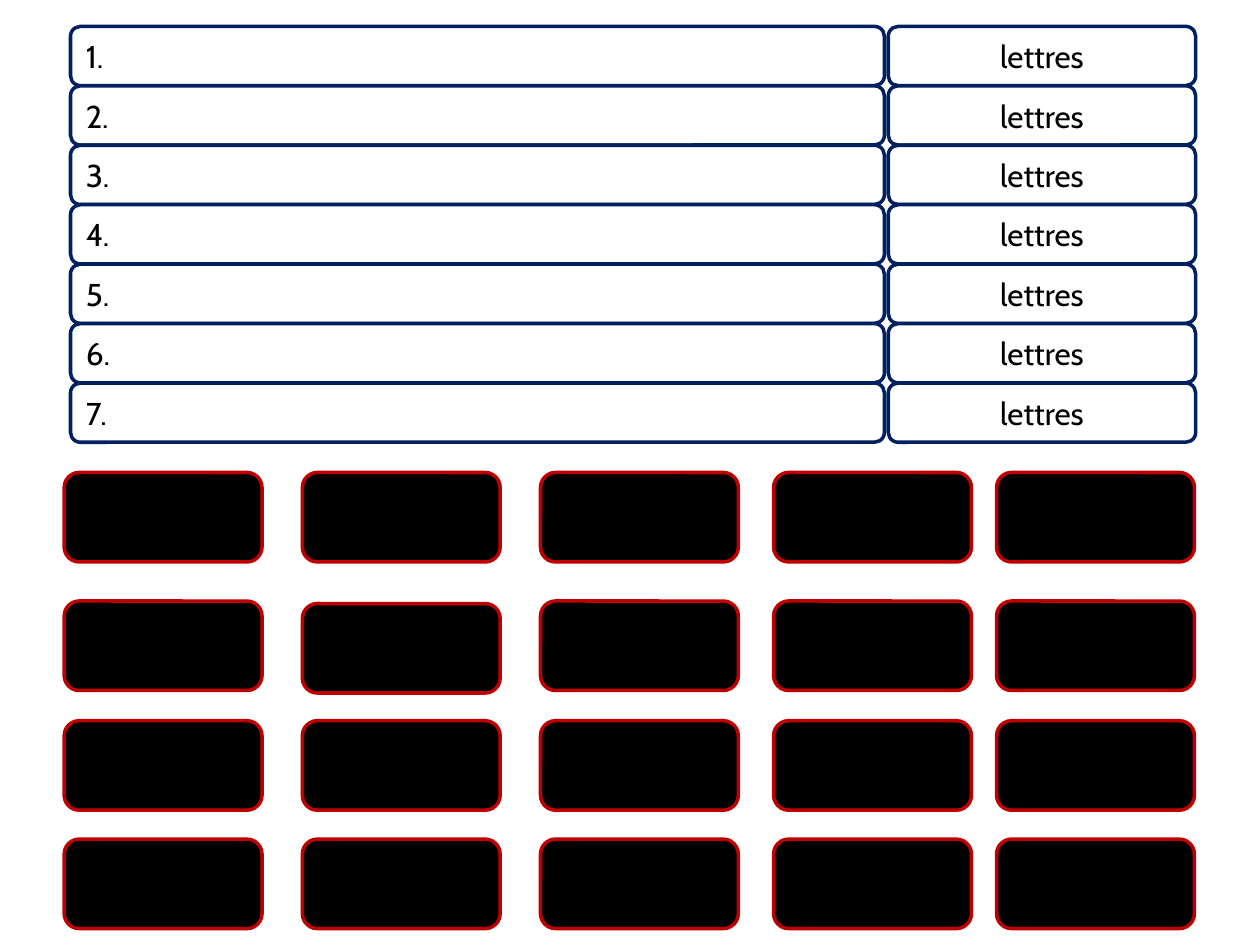
from pptx import Presentation
from pptx.dml.color import RGBColor
from pptx.enum.shapes import MSO_SHAPE as Shape
from pptx.enum.text import MSO_ANCHOR as Anchor, PP_ALIGN as Align
from pptx.util import Inches, Pt

NUMBERS = [f"{number}." for number in range(1, 8)]
UNIT = "lettres"

THEME = {
    "font": "Cabin",
    "size": Pt(18),
    "text": RGBColor(0, 0, 0),
    "line_width": Pt(2),
    "answer": {"fill": RGBColor(255, 255, 255), "line": RGBColor(0x00, 0x20, 0x60)},
    "tile": {"fill": RGBColor(0, 0, 0), "line": RGBColor(0xC0, 0x00, 0x00)},
}

# Answer rows: columns are (left, width, alignment)
ANSWER_COLUMN = (0.56, 6.46, Align.LEFT)
UNIT_COLUMN = (7.05, 2.44, Align.CENTER)
FIRST_ROW, LAST_ROW, ROW_HEIGHT = 0.21, 3.04, 0.47

# Tiles that cover the lower half
TILE_LEFTS = [0.51, 2.4, 4.29, 6.14, 7.91]
TILE_TOPS = [3.75, 4.77, 5.72, 6.66]
TILE_WIDTH, TILE_HEIGHT = 1.57, 0.71
TILE_NUDGES = {(1, 1): 0.02}  # (row, column): extra distance down


def add_box(slide, left, top, width, height, style):
    box = slide.shapes.add_shape(
        Shape.ROUNDED_RECTANGLE, *map(Inches, (left, top, width, height)))
    box.shadow.inherit = False
    box.fill.solid()
    box.fill.fore_color.rgb = style["fill"]
    box.line.color.rgb = style["line"]
    box.line.width = THEME["line_width"]
    return box


def write(box, text, alignment):
    box.text_frame.vertical_anchor = Anchor.MIDDLE
    paragraph = box.text_frame.paragraphs[0]
    paragraph.text = text
    paragraph.alignment = alignment
    paragraph.font.name = THEME["font"]
    paragraph.font.size = THEME["size"]
    paragraph.font.color.rgb = THEME["text"]


def add_answer_rows(slide):
    pitch = (LAST_ROW - FIRST_ROW) / (len(NUMBERS) - 1)
    for row, number in enumerate(NUMBERS):
        top = FIRST_ROW + row * pitch
        for text, column in ((number, ANSWER_COLUMN), (UNIT, UNIT_COLUMN)):
            left, width, alignment = column
            box = add_box(slide, left, top, width, ROW_HEIGHT, THEME["answer"])
            write(box, text, alignment)


def add_tiles(slide):
    for row, top in enumerate(TILE_TOPS):
        for column, left in enumerate(TILE_LEFTS):
            nudge = TILE_NUDGES.get((row, column), 0)
            add_box(slide, left, top + nudge, TILE_WIDTH, TILE_HEIGHT, THEME["tile"])


def main():
    presentation = Presentation()
    presentation.slide_width = Inches(10)
    presentation.slide_height = Inches(7.5)
    slide = presentation.slides.add_slide(presentation.slide_layouts[6])
    add_answer_rows(slide)
    add_tiles(slide)
    presentation.save("out.pptx")


if __name__ == "__main__":
    main()
